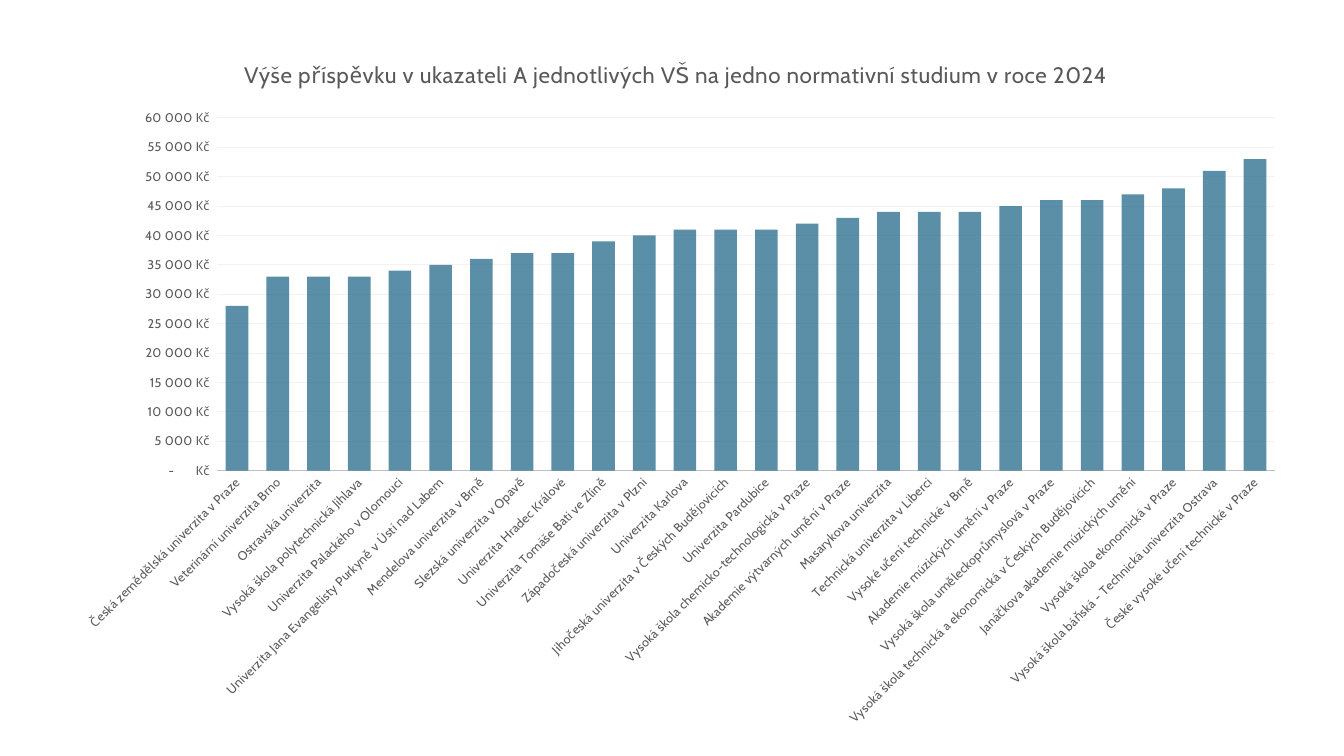
from lxml.etree import SubElement
from pptx import Presentation
from pptx.chart.data import CategoryChartData
from pptx.dml.color import RGBColor
from pptx.enum.chart import XL_CHART_TYPE, XL_TICK_MARK
from pptx.oxml import parse_xml
from pptx.oxml.ns import nsdecls, qn
from pptx.util import Inches, Pt

TITLE = "Výše příspěvku v ukazateli A jednotlivých VŠ na jedno normativní studium v roce 2024"
CONTRIBUTIONS = [
    ("Česká zemědělská univerzita v Praze", 28000),
    ("Veterinární univerzita Brno", 33000),
    ("Ostravská univerzita", 33000),
    ("Vysoká škola polytechnická Jihlava", 33000),
    ("Univerzita Palackého v Olomouci", 34000),
    ("Univerzita Jana Evangelisty Purkyně v Ústí nad Labem", 35000),
    ("Mendelova univerzita v Brně", 36000),
    ("Slezská univerzita v Opavě", 37000),
    ("Univerzita Hradec Králové", 37000),
    ("Univerzita Tomáše Bati ve Zlíně", 39000),
    ("Západočeská univerzita v Plzni", 40000),
    ("Univerzita Karlova", 41000),
    ("Jihočeská univerzita v Českých Budějovicích", 41000),
    ("Univerzita Pardubice", 41000),
    ("Vysoká škola chemicko-technologická v Praze", 42000),
    ("Akademie výtvarných umění v Praze", 43000),
    ("Masarykova univerzita", 44000),
    ("Technická univerzita v Liberci", 44000),
    ("Vysoké učení technické v Brně", 44000),
    ("Akademie múzických umění v Praze", 45000),
    ("Vysoká škola uměleckoprůmyslová v Praze", 46000),
    ("Vysoká škola technická a ekonomická v Českých Budějovicích", 46000),
    ("Janáčkova akademie múzických umění", 47000),
    ("Vysoká škola ekonomická v Praze", 48000),
    ("Vysoká škola báňská - Technická univerzita Ostrava", 51000),
    ("České vysoké učení technické v Praze", 53000),
]
CURRENCY_FORMAT = (
    r'_-* #\ ##0\ [$Kč-405]_-;\-* #\ ##0\ [$Kč-405]_-;'
    r'_-* "-"??\ [$Kč-405]_-;_-@_-'
)
CHART_LEFT, CHART_TOP, CHART_WIDTH, CHART_HEIGHT = 0.6, 0.36, 12.3, 6.98
PLOT_LEFT, PLOT_TOP, PLOT_WIDTH, PLOT_HEIGHT = 2.15, 1.17, 10.5, 3.5
TITLE_LEFT, TITLE_TOP = 2.38, 0.55
FONT = "Cabin"
BAR = RGBColor(0x15, 0x60, 0x82)
TEXT = RGBColor(0x59, 0x59, 0x59)
AXIS = RGBColor(0xBF, 0xBF, 0xBF)
GRID = RGBColor(0xF2, 0xF2, 0xF2)
BLACK = RGBColor(0, 0, 0)


def format_font(font, size, color=TEXT, spacing=0):
    font.name = FONT
    font.size = Pt(size)
    font.bold = False
    font.color.rgb = color
    font._element.set("spc", str(spacing))


def write_title(chart, text, **font_format):
    paragraph = chart.chart_title.text_frame.paragraphs[0]
    run = paragraph.add_run()
    run.text = text
    format_font(run.font, **font_format)


def make_layout(left, top, **settings):
    settings.update(
        xMode="edge", yMode="edge",
        x=(left - CHART_LEFT) / CHART_WIDTH, y=(top - CHART_TOP) / CHART_HEIGHT,
    )
    order = ("layoutTarget", "xMode", "yMode", "x", "y", "w", "h")
    entries = "".join(
        f'<c:{name} val="{settings[name]}"/>' for name in order if name in settings
    )
    return parse_xml(
        f'<c:layout {nsdecls("c")}><c:manualLayout>{entries}</c:manualLayout></c:layout>'
    )


def place(element, layout, position):
    for existing in element.findall(qn("c:layout")):
        element.remove(existing)
    element.insert(position, layout)


def format_axes(chart):
    categories, values = chart.category_axis, chart.value_axis
    for axis in (categories, values):
        axis.major_tick_mark = XL_TICK_MARK.NONE
        axis.minor_tick_mark = XL_TICK_MARK.NONE
        format_font(axis.tick_labels.font, size=9, spacing=20)
    categories.format.line.color.rgb = AXIS
    categories.format.line.width = Pt(1.25)
    label_body = categories._element.find(qn("c:txPr")).find(qn("a:bodyPr"))
    label_body.set("rot", "-2700000")
    values.minimum_scale = 0
    values.maximum_scale = 60000
    values.major_unit = 5000
    values.format.line.fill.background()
    values.major_gridlines.format.line.color.rgb = GRID
    values.major_gridlines.format.line.width = Pt(0.75)
    values.tick_labels.number_format = CURRENCY_FORMAT
    values.tick_labels.number_format_is_linked = False


def format_bars(chart):
    plot = chart.plots[0]
    plot.gap_width = 80
    plot.overlap = 25
    plot.vary_by_categories = False
    fill = plot.series[0].format.fill
    fill.solid()
    fill.fore_color.rgb = BAR
    for color in plot.series[0]._element.spPr.iter(qn("a:srgbClr")):
        SubElement(color, qn("a:alpha")).set("val", "70000")


def add_contribution_chart(slide):
    data = CategoryChartData()
    data.categories = [school for school, amount in CONTRIBUTIONS]
    data.add_series("Series 1", [amount for school, amount in CONTRIBUTIONS])
    chart = slide.shapes.add_chart(
        XL_CHART_TYPE.COLUMN_CLUSTERED,
        Inches(CHART_LEFT), Inches(CHART_TOP), Inches(CHART_WIDTH), Inches(CHART_HEIGHT),
        data,
    ).chart
    format_font(chart.font, size=10, color=BLACK)
    chart.has_legend = False
    write_title(chart, TITLE, size=16, spacing=50)
    format_axes(chart)
    format_bars(chart)
    plot_layout = make_layout(
        PLOT_LEFT, PLOT_TOP, layoutTarget="inner",
        w=PLOT_WIDTH / CHART_WIDTH, h=PLOT_HEIGHT / CHART_HEIGHT,
    )
    place(chart.chart_title._element, make_layout(TITLE_LEFT, TITLE_TOP), 1)
    place(chart._chartSpace.chart.plotArea, plot_layout, 0)


def main():
    presentation = Presentation()
    presentation.slide_width = Inches(13.33)
    presentation.slide_height = Inches(7.5)
    slide = presentation.slides.add_slide(presentation.slide_layouts[6])
    add_contribution_chart(slide)
    presentation.save("out.pptx")


if __name__ == "__main__":
    main()
